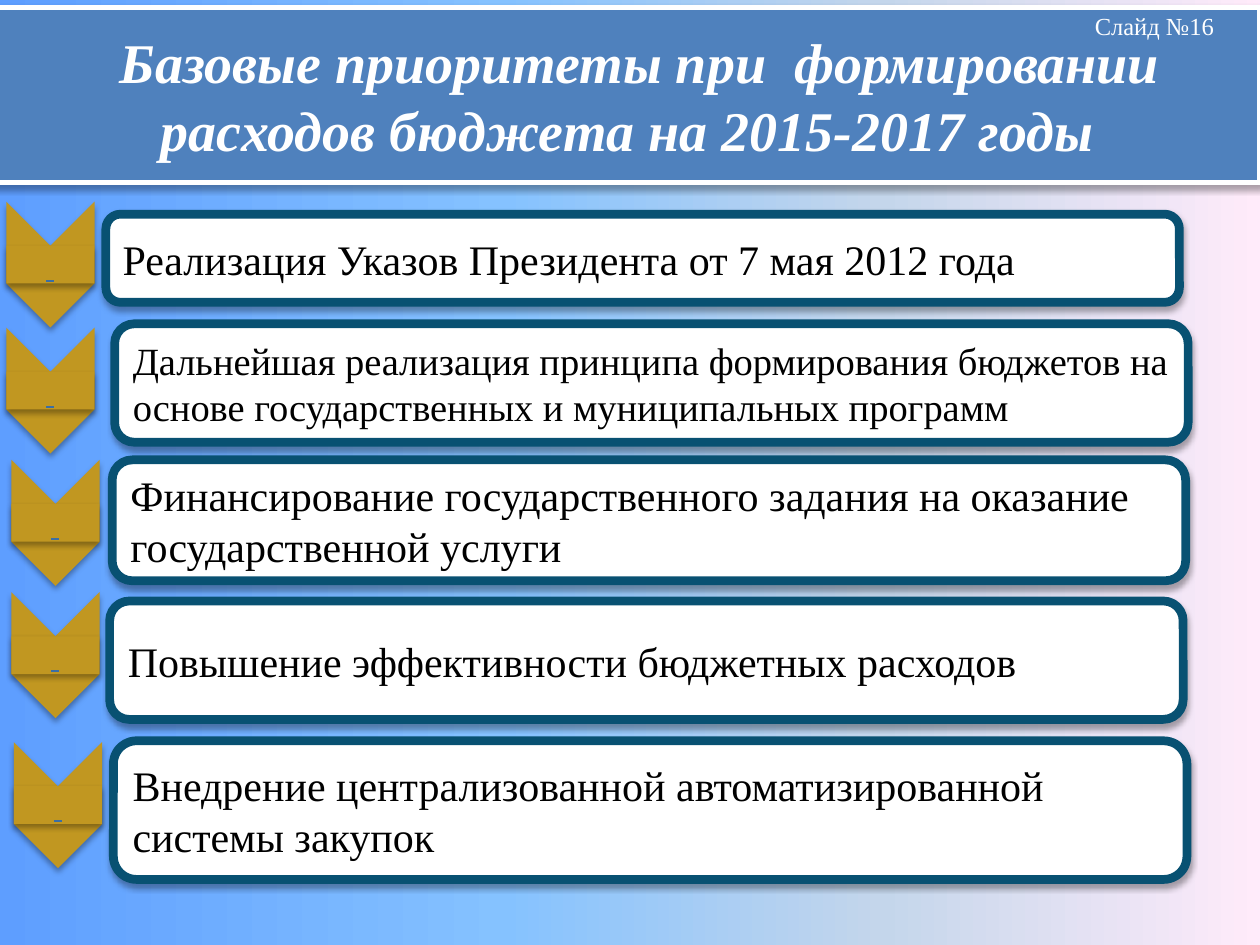
from lxml import etree
from pptx import Presentation
from pptx.dml.color import RGBColor
from pptx.enum import shapes, text
from pptx.oxml.ns import qn
from pptx.util import Inches, Pt

KIND = shapes.MSO_SHAPE
LEFT, MID = text.PP_ALIGN.LEFT, text.PP_ALIGN.CENTER
FACE = "Times New Roman"
GOLD, TEAL, BLUE, WHITE = "C19721", "085172", "4F81BD", "FFFFFF"
STOPS = [(0, "5E9EFF"), (40, "85C2FF"), (70, "C4D6EB"), (100, "FFEBFA")]
# arrow left, arrow top, box left, box top, box height, text size, wording
ROWS = [
    (0.05, 1.6, 0.84, 1.7, 0.7, 24, "Реализация Указов Президента от 7 мая 2012 года"),
    (0.05, 2.6, 0.91, 2.57, 0.94, 22, "Дальнейшая реализация принципа формирования "
     "бюджетов на основе государственных и муниципальных программ"),
    (0.09, 3.65, 0.89, 3.65, 0.96, 24, "Финансирование государственного задания на "
     "оказание государственной услуги"),
    (0.09, 4.7, 0.87, 4.77, 0.94, 24, "Повышение эффективности бюджетных расходов"),
    (0.11, 5.89, 0.9, 5.88, 1.1, 24, "Внедрение централизованной автоматизированной "
     "системы закупок"),
]


def color(code):
    return RGBColor.from_string(code)


def add(parent, tag, **attrs):
    return etree.SubElement(parent, qn(tag), attrs)


def paint(slide):
    """Fill the background with a gradient from left to right."""
    fill = slide.background.fill
    fill.gradient()
    fill.gradient_angle = 0
    stops = slide.element.find(".//" + qn("a:gsLst"))
    for old in list(stops):
        stops.remove(old)
    for place, code in STOPS:
        stop = add(stops, "a:gs", pos=str(place * 1000))
        add(stop, "a:srgbClr", val=code)


def shade(shape):
    """Cast a soft shadow straight down."""
    shape.shadow.inherit = False
    effects = shape._element.spPr.find(qn("a:effectLst"))
    outer = add(effects, "a:outerShdw", blurRad=str(Pt(3.5)), dist=str(Pt(2.2)),
                dir="5400000", rotWithShape="0")
    add(add(outer, "a:srgbClr", val="000000"), "a:alpha", val="32000")


def draw(home, kind, x, y, w, h, fill, line=None, width=0):
    shape = home.add_shape(kind, Inches(x), Inches(y), Inches(w), Inches(h))
    shape.fill.solid()
    shape.fill.fore_color.rgb = color(fill)
    if line:
        shape.line.color.rgb = color(line)
        shape.line.width = Pt(width)
    else:
        shape.line.fill.background()
    shade(shape)
    return shape


def write(shape, words, size, code, align=LEFT, **style):
    frame = shape.text_frame
    frame.word_wrap = True
    para = frame.paragraphs[0]
    para.text = words
    para.alignment = align
    look = dict(name=FACE, size=Pt(size), **style)
    for run in para.runs:
        for key, value in look.items():
            setattr(run.font, key, value)
        run.font.color.rgb = color(code)
    return para


def arrow(slide, x, y):
    """Group a chevron that points down with its middle band."""
    group = slide.shapes.add_group_shape().shapes
    tip = draw(group, KIND.CHEVRON, x - 0.15, y + 0.15, 1, 0.7, GOLD)
    tip.rotation = 90
    band = draw(group, KIND.RECTANGLE, x, y + 0.35, 0.7, 0.3, GOLD)
    write(band, " ", 18, "3A6EA5", MID, underline=True)


def head(slide):
    bar = draw(slide.shapes, KIND.RECTANGLE, -0.04, 0.06, 10.04, 1.39, BLUE, WHITE, 3)
    para = write(bar, "Базовые приоритеты при  формировании\v"
                 "расходов бюджета на 2015-2017 годы", 32, WHITE, MID,
                 bold=True, italic=True)
    para._p.get_or_add_pPr().set("indent", str(Inches(0.2)))


def label(slide):
    box = slide.shapes.add_textbox(Inches(8.59), Inches(0.04), Inches(1.41), Inches(0.34))
    write(box, "Слайд №16", 14, WHITE)


def main():
    deck = Presentation()
    deck.slide_width, deck.slide_height = Inches(10), Inches(7.5)
    slide = deck.slides.add_slide(deck.slide_layouts[6])
    paint(slide)
    head(slide)
    for left, top, x, y, high, size, words in ROWS:
        box = draw(slide.shapes, KIND.ROUNDED_RECTANGLE, x, y, 8.52, high, WHITE, TEAL, 5)
        write(box, words, size, "000000")
        arrow(slide, left, top)
    label(slide)
    deck.save("out.pptx")


if __name__ == "__main__":
    main()
